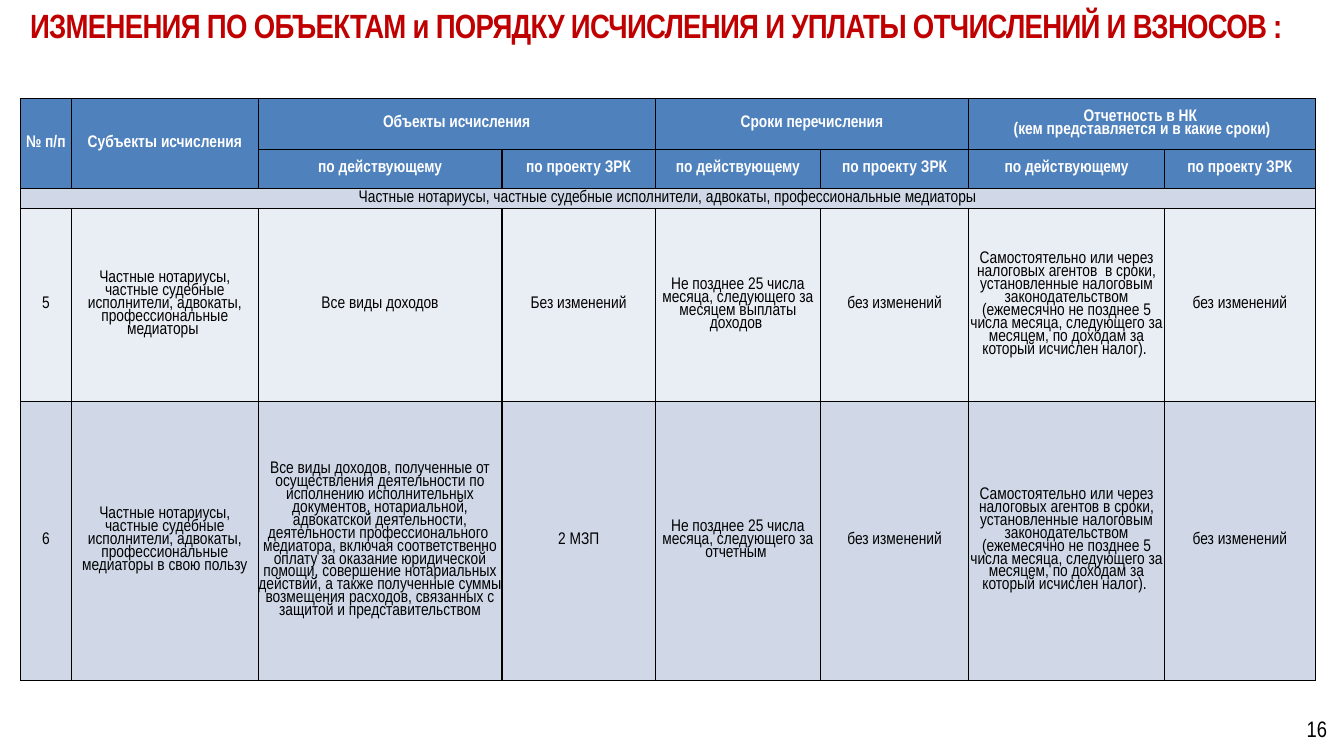
from lxml.etree import SubElement, fromstring
from pptx import Presentation
from pptx.dml.color import RGBColor
from pptx.enum.text import MSO_ANCHOR as Anchor, PP_ALIGN as Align
from pptx.oxml.ns import nsdecls
from pptx.util import Inches, Pt

FONT = "Arial Narrow"
BLACK = RGBColor(0x00, 0x00, 0x00)
WHITE = RGBColor(0xFF, 0xFF, 0xFF)
RED = RGBColor(0xC0, 0x00, 0x00)
HEADER_BLUE = RGBColor(0x4F, 0x81, 0xBD)
BAND_DARK = RGBColor(0xD0, 0xD8, 0xE8)
BAND_LIGHT = RGBColor(0xE9, 0xED, 0xF4)

TITLE = "ИЗМЕНЕНИЯ ПО ОБЪЕКТАМ и ПОРЯДКУ ИСЧИСЛЕНИЯ И УПЛАТЫ ОТЧИСЛЕНИЙ И ВЗНОСОВ :"
PAGE_NUMBER = "16"
CURRENT, PROJECT, UNCHANGED = "по действующему", "по проекту ЗРК", "без изменений"
SUBJECTS = "Частные нотариусы, частные судебные исполнители, адвокаты, профессиональные медиаторы"
REPORTING = (
    "Самостоятельно или через налоговых агентов {}в сроки, установленные налоговым "
    "законодательством (ежемесячно не позднее 5 числа месяца, следующего за месяцем, "
    "по доходам за который исчислен налог). "
)
INCOME = (
    "Все виды доходов, полученные от осуществления деятельности по исполнению "
    "исполнительных документов, нотариальной, адвокатской деятельности, деятельности "
    "профессионального  медиатора, включая соответственно оплату за оказание юридической "
    "помощи, совершение нотариальных действий, а также полученные суммы возмещения "
    "расходов, связанных с защитой и представительством"
)
ROWS = [
    ["№ п/п", "Субъекты исчисления", "Объекты исчисления", "", "Сроки перечисления", "",
     "Отчетность в НК \v(кем представляется и в какие сроки)", ""],
    ["", ""] + [CURRENT, PROJECT] * 3,
    [SUBJECTS] + [""] * 7,
    ["5", SUBJECTS + " ", "Все виды доходов", "Без изменений",
     "Не позднее 25 числа месяца, следующего за месяцем выплаты доходов ", UNCHANGED,
     REPORTING.format(" "), UNCHANGED],
    ["6", SUBJECTS + " в свою пользу", INCOME, "2 МЗП",
     "Не позднее 25 числа месяца, следующего за отчетным ", UNCHANGED,
     REPORTING.format(""), UNCHANGED],
]
COLUMN_WIDTHS = [0.51, 1.85, 2.42, 1.52, 1.64, 1.47, 1.94, 1.5]
ROW_HEIGHTS = [0.5, 0.39, 0.2, 1.91, 2.77]
ROW_FILLS = [HEADER_BLUE, HEADER_BLUE, BAND_DARK, BAND_LIGHT, BAND_DARK]
HEADER_ROWS = 2
MERGES = [((0, 0), (1, 0)), ((0, 1), (1, 1)), ((2, 0), (2, 7))]
MERGES += [((0, column), (0, column + 1)) for column in (2, 4, 6)]
LINE_SPACING = 0.82


def style_paragraph(paragraph, size, color, bold, align):
    paragraph.alignment = align
    for run in paragraph.runs:
        run.font.name = FONT
        run.font.size = Pt(size)
        run.font.bold = bold
        run.font.color.rgb = color


def add_label(slide, text, box, size, color, bold, align, anchor):
    shape = slide.shapes.add_textbox(*map(Inches, box))
    frame = shape.text_frame
    frame.word_wrap = True
    frame.vertical_anchor = anchor
    frame.text = text
    style_paragraph(frame.paragraphs[0], size, color, bold, align)
    return frame.paragraphs[0]


def add_borders(cell):
    properties = cell._tc.get_or_add_tcPr()
    for position, side in enumerate(("lnL", "lnR", "lnT", "lnB")):
        line = fromstring(f'<a:{side} {nsdecls("a")} w="{Pt(1)}"><a:solidFill/></a:{side}>')
        SubElement(line[0], line[0].tag.replace("solidFill", "srgbClr"), val=str(BLACK))
        properties.insert(position, line)


def add_changes_table(slide):
    frame = slide.shapes.add_table(
        len(ROWS), len(COLUMN_WIDTHS), Inches(0.2), Inches(0.98),
        Inches(sum(COLUMN_WIDTHS)), Inches(sum(ROW_HEIGHTS)))
    table = frame.table
    for column, width in zip(table.columns, COLUMN_WIDTHS):
        column.width = Inches(width)
    for row, height in zip(table.rows, ROW_HEIGHTS):
        row.height = Inches(height)
    for row_index, texts in enumerate(ROWS):
        is_header = row_index < HEADER_ROWS
        for column_index, text in enumerate(texts):
            cell = table.cell(row_index, column_index)
            cell.margin_left = cell.margin_right = cell.margin_top = cell.margin_bottom = 0
            cell.vertical_anchor = Anchor.MIDDLE
            cell.fill.solid()
            cell.fill.fore_color.rgb = ROW_FILLS[row_index]
            add_borders(cell)
            cell.text_frame.text = text
            paragraph = cell.text_frame.paragraphs[0]
            paragraph.line_spacing = LINE_SPACING
            paragraph.font.size = Pt(12)
            style_paragraph(paragraph, 12, WHITE if is_header else BLACK, is_header, Align.CENTER)
    for first, last in MERGES:
        table.cell(*first).merge(table.cell(*last))


def main():
    presentation = Presentation()
    presentation.slide_width = Inches(13.33)
    presentation.slide_height = Inches(7.5)
    slide = presentation.slides.add_slide(presentation.slide_layouts[6])
    add_label(slide, PAGE_NUMBER, (10.15, 7.03, 3.11, 0.4), 16, BLACK, False,
              Align.RIGHT, Anchor.MIDDLE)
    add_changes_table(slide)
    title = add_label(slide, TITLE, (0.2, 0, 12.88, 0.5), 24, RED, True,
                      Align.LEFT, Anchor.TOP)
    title.runs[0].font._element.set("spc", "-50")
    presentation.save("out.pptx")


if __name__ == "__main__":
    main()
